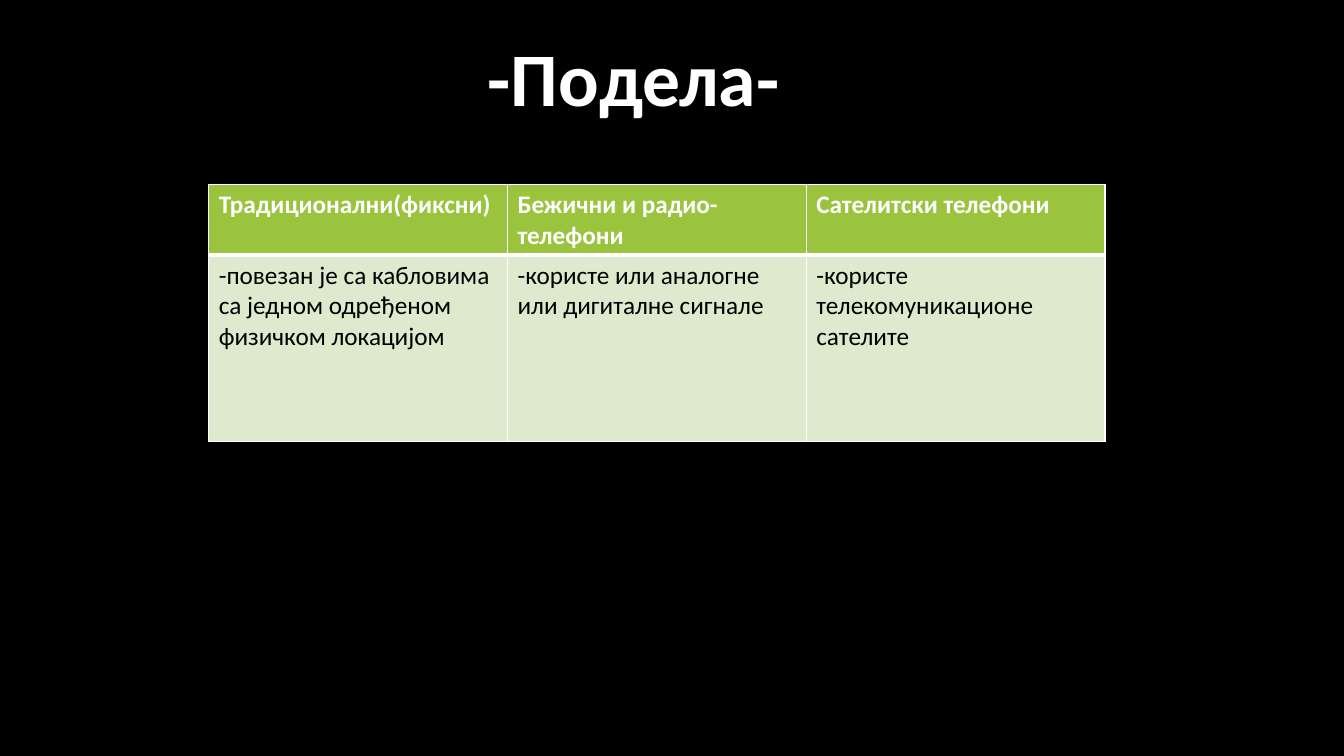
from lxml.etree import SubElement
from pptx import Presentation
from pptx.dml.color import RGBColor
from pptx.enum.text import MSO_ANCHOR as Anchor, MSO_AUTO_SIZE as AutoSize, PP_ALIGN as Align
from pptx.oxml.ns import qn
from pptx.util import Inches, Pt

COLORS = {
    "background": "000000",
    "light": "FFFFFF",
    "dark": "000000",
    "header": "9AC43E",
    "body": "DEEACE",
}
FONT = "Calibri"
PHONE_TYPES = [
    ("Традиционални(фиксни)", "-повезан је са кабловима са једном одређеном физичком локацијом"),
    ("Бежични и радио-телефони", "-користе или аналогне или дигиталне сигнале"),
    ("Сателитски телефони", "-користе телекомуникационе сателите"),
]


def color(name):
    return RGBColor.from_string(COLORS[name])


def write(para, text, size, shade, bold):
    span = para.add_run()
    span.text = text
    span.font.name = FONT
    span.font.size = Pt(size)
    span.font.bold = bold
    span.font.color.rgb = color(shade)


def set_borders(cell, widths):
    properties = cell._tc.get_or_add_tcPr()
    for position, (side, width) in enumerate(widths.items()):
        line = properties.makeelement(qn(f"a:ln{side}"), {"w": str(Pt(width))})
        fill = SubElement(line, qn("a:solidFill"))
        SubElement(fill, qn("a:srgbClr"), val=COLORS["light"])
        properties.insert(position, line)


def add_title(page, left, top, width, height):
    title = page.shapes.title
    title.left, title.top = Inches(left), Inches(top)
    title.width, title.height = Inches(width), Inches(height)
    frame = title.text_frame
    frame.word_wrap = False
    frame.auto_size = AutoSize.SHAPE_TO_FIT_TEXT
    frame.vertical_anchor = Anchor.TOP
    para = frame.paragraphs[0]
    para.alignment = Align.CENTER
    para.line_spacing = 1.0
    write(para, "-Подела-", 54, "light", True)


def add_phone_table(page, left, top, width, header_height, body_height):
    box = page.shapes.add_table(
        2, len(PHONE_TYPES), Inches(left), Inches(top),
        Inches(width), Inches(header_height + body_height),
    )
    table = box.table
    for row, height in zip(table.rows, (header_height, body_height)):
        row.height = Inches(height)
    for column_index, texts in enumerate(PHONE_TYPES):
        table.columns[column_index].width = Inches(width / len(PHONE_TYPES))
        for row_index, text in enumerate(texts):
            is_header = row_index == 0
            cell = table.cell(row_index, column_index)
            cell.fill.solid()
            cell.fill.fore_color.rgb = color("header" if is_header else "body")
            set_borders(cell, {
                "L": 1, "R": 1,
                "T": 1 if is_header else 3,
                "B": 3 if is_header else 1,
            })
            write(cell.text_frame.paragraphs[0], text, 18,
                  "light" if is_header else "dark", is_header)


def main():
    deck = Presentation()
    deck.slide_width, deck.slide_height = Inches(13.33), Inches(7.5)
    page = deck.slides.add_slide(deck.slide_layouts[5])
    page.background.fill.solid()
    page.background.fill.fore_color.rgb = color("background")
    add_phone_table(page, 2.07, 1.83, 8.89, 0.7, 1.85)
    add_title(page, 4.73, 0.26, 3.11, 1.01)
    deck.save("out.pptx")


if __name__ == "__main__":
    main()
